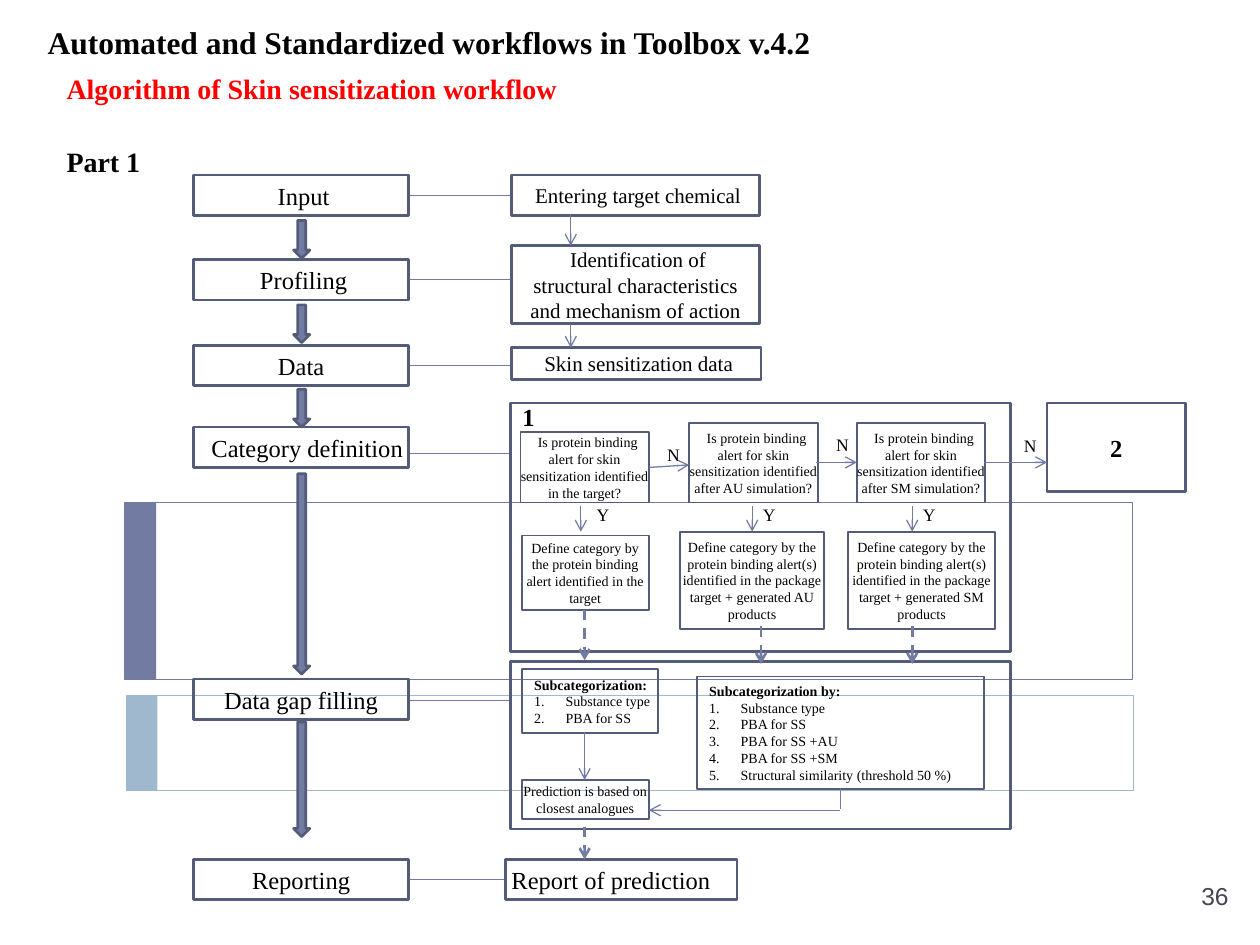
from dataclasses import dataclass
from lxml.etree import SubElement
from pptx import Presentation
from pptx.dml.color import RGBColor
from pptx.enum.dml import MSO_LINE
from pptx.enum.shapes import MSO_CONNECTOR, MSO_SHAPE
from pptx.enum.text import MSO_ANCHOR, PP_ALIGN
from pptx.oxml.ns import qn
from pptx.util import Emu, Inches, Pt

BLACK = RGBColor(0, 0, 0)
RED = RGBColor(0xFF, 0, 0)
SLATE = RGBColor(0x54, 0x5C, 0x79)
BLUE = RGBColor(0x72, 0x7C, 0xA3)
PALE = RGBColor(0x9F, 0xB8, 0xCD)
GREY = RGBColor(0x46, 0x46, 0x53)
SERIF = "Times New Roman"
COLS, ROWS = 1000, 750  # grid laid over the slide

deck = Presentation()
deck.slide_width, deck.slide_height = Inches(10), Inches(7.5)
slide = deck.slides.add_slide(deck.slide_layouts[6])
shapes = slide.shapes


def col(n: float) -> Emu:
    return Emu(round(deck.slide_width * n / COLS))


def row(n: float) -> Emu:
    return Emu(round(deck.slide_height * n / ROWS))


@dataclass
class Box:
    x: float
    y: float
    w: float
    h: float
    text: str = ""
    size: float = 14
    line: float = 1.5
    inset: tuple = (10, 5, 10, 5)
    bold: bool = False
    lead: float = 0
    items: tuple = ()


@dataclass
class Link:
    x1: float
    y1: float
    x2: float
    y2: float
    head: bool = False
    dash: bool = False


@dataclass
class Label:
    x: float
    y: float
    w: float
    h: float
    text: str
    size: float
    color: RGBColor = BLACK
    bold: bool = False
    font: str = SERIF
    align: PP_ALIGN = PP_ALIGN.LEFT
    anchor: MSO_ANCHOR = MSO_ANCHOR.TOP
    inset: tuple = (10, 5, 10, 5)
    wrap: bool = True


def add_run(para, text: str, size: float, bold=False, color=BLACK, font=SERIF) -> None:
    run = para.add_run()
    run.text = text
    run.font.size, run.font.bold, run.font.name = Pt(size), bold, font
    run.font.color.rgb = color


def set_frame(frame, inset: tuple, anchor, wrap=True) -> None:
    left, top, right, base = inset
    frame.margin_left, frame.margin_right = col(left), col(right)
    frame.margin_top, frame.margin_bottom = row(top), row(base)
    frame.vertical_anchor, frame.word_wrap = anchor, wrap


def draw_form(kind, x, y, w, h, fill=None, edge=None, width=1.5):
    form = shapes.add_shape(kind, col(x), row(y), col(w), row(h))
    form.shadow.inherit = False
    for paint, color in ((form.fill, fill), (form.line.fill, edge)):
        if color is None:
            paint.background()
        else:
            paint.solid()
            paint.fore_color.rgb = color
    if edge is not None:
        form.line.width = Pt(width)
    return form


def draw_box(box: Box) -> None:
    form = draw_form(MSO_SHAPE.RECTANGLE, box.x, box.y, box.w, box.h, edge=SLATE, width=box.line)
    if not box.text:
        return
    frame = form.text_frame
    set_frame(frame, box.inset, MSO_ANCHOR.MIDDLE)
    para = frame.paragraphs[0]
    para.alignment = PP_ALIGN.LEFT if box.items else PP_ALIGN.CENTER
    if box.lead:
        para._p.get_or_add_pPr().set("indent", str(col(box.lead)))
    add_run(para, box.text, box.size, box.bold)
    for item in box.items:
        para = frame.add_paragraph()
        para.alignment = PP_ALIGN.LEFT
        props = para._p.get_or_add_pPr()
        props.set("marL", str(col(25)))
        props.set("indent", str(-col(25)))
        SubElement(props, qn("a:buAutoNum"), type="arabicPeriod")
        add_run(para, item, box.size)


def draw_link(link: Link) -> None:
    wire = shapes.add_connector(MSO_CONNECTOR.STRAIGHT, col(link.x1), row(link.y1),
                                col(link.x2), row(link.y2))
    wire.line.color.rgb = BLUE
    wire.line.width = Pt(1.5 if link.dash else 0.75)
    if link.dash:
        wire.line.dash_style = MSO_LINE.DASH
    if link.head:
        SubElement(wire.line._get_or_add_ln(), qn("a:tailEnd"), type="arrow")
    SubElement(wire._element.spPr, qn("a:effectLst"))


def draw_label(label: Label) -> None:
    frame = shapes.add_textbox(col(label.x), row(label.y), col(label.w), row(label.h)).text_frame
    set_frame(frame, label.inset, label.anchor, label.wrap)
    para = frame.paragraphs[0]
    para.alignment = label.align
    add_run(para, label.text, label.size, label.bold, label.color, label.font)


def small(x, y, w, h, text, lead=0) -> Box:
    return Box(x, y, w, h, text, 8, 1, (0, 0, 0, 0), lead=lead)


def listing(x, y, w, h, text, *items) -> Box:
    return Box(x, y, w, h, text, 8, 1, (10, 0, 0, 0), True, items=items)


def mark(x, y, text) -> Label:
    return Label(x, y, 19, 19, text, 10, align=PP_ALIGN.CENTER,
                 anchor=MSO_ANCHOR.MIDDLE, inset=(8, 0, 0, 0))


# Background bands
BANDS = ((99, 399, 140, BLUE), (100, 552, 75, PALE))
for x, y, h, color in BANDS:
    draw_form(MSO_SHAPE.RECTANGLE, x, y, 800, h, edge=color, width=0.5)
for x, y, h, color in BANDS:
    draw_form(MSO_SHAPE.RECTANGLE, x, y, 25, h, fill=color)

# Stages on the left, each wired to its step on the right
STAGES = ((139, "Input", 155, 405, 4), (206, "Profiling", 222, 405, 4), (274, "Data", 290, 405, 0),
          (339, "Category definition", 360, 405, 0), (539, "Data gap filling", 556, 405, 0),
          (682, "Reporting", 698, 401, 0))
for y, text, level, end, lead in STAGES:
    inset = (10, 5, 0, 5) if text.startswith("Category") else (10, 5, 10, 5)
    draw_box(Box(153.5, y, 171, 32, text, inset=inset, lead=lead))
    draw_link(Link(325, level, end, level))
for y, h in ((175, 30), (242, 30), (309, 30), (376, 159), (573, 91)):
    draw_form(MSO_SHAPE.DOWN_ARROW, 233, y, 13, h, BLUE, SLATE)

ASK = "Is protein binding alert for skin sensitization identified "
DEFINE = "Define category by the protein binding "
BOTH = DEFINE + "alert(s) identified in the package target + generated "
BOXES = (
    # Steps
    Box(406, 139, 197, 32, "Entering target chemical", 12, lead=4),
    Box(406, 195, 197, 62,
        "Identification of structural characteristics and mechanism of action", 12, lead=4),
    Box(406, 276, 198, 25, "Skin sensitization data", 12, lead=4),
    Box(401, 682, 184, 32, "Report of prediction", inset=(0, 5, 16, 5)),
    # Panels
    Box(405, 320, 397, 197),
    Box(405, 525, 397, 133),
    Box(831, 320, 110, 70, "2", inset=(0, 0, 0, 0), bold=True),
    # Questions and categories
    small(413, 343, 102, 56, ASK + "in the target?", 5),
    small(547, 336, 102, 63, ASK + "after AU simulation?", 5),
    small(680, 336, 102, 63, ASK + "after SM simulation?", 5),
    small(414, 425, 101, 59, DEFINE + "alert identified in the target"),
    small(540, 422, 114, 77, BOTH + "AU products"),
    small(673, 422, 117, 77, BOTH + "SM products"),
    # Gap filling
    listing(414, 531, 108, 51, "Subcategorization:", "Substance type", "PBA for SS"),
    small(414, 619, 101, 31, "Prediction is based on closest analogues"),
    listing(553, 537, 228, 89, "Subcategorization by:", "Substance type", "PBA for SS",
            "PBA for SS +AU", "PBA for SS +SM", "Structural similarity (threshold 50 %)"),
)
for box in BOXES:
    draw_box(box)

# Arrows: across, down, then dashed
for x1, y1, x2, y2 in ((515, 371, 547, 369), (648, 367, 680, 367), (781, 367, 831, 367),
                       (667, 643, 515, 643)):
    draw_link(Link(x1, y1, x2, y2, head=True))
draw_link(Link(667, 625, 667, 642))
for x, top, end in ((453, 170, 195), (453, 257, 276), (464, 581, 619),
                    (461, 402, 422), (597, 402, 422), (724, 402, 422)):
    draw_link(Link(x, top, x, end, head=True))
for x, top, end in ((464, 484, 524), (604, 497, 527), (724, 497, 527), (464, 656, 682)):
    draw_link(Link(x, top, x, end, head=True, dash=True))

# Labels
LABELS = (
    mark(465, 399, "Y"), mark(597, 399, "Y"), mark(724, 399, "Y"),
    mark(521, 351, "N"), mark(655, 343, "N"), mark(804, 344, "N"),
    Label(401, 318, 37, 25, "1", 14, bold=True, align=PP_ALIGN.CENTER,
          anchor=MSO_ANCHOR.MIDDLE, inset=(0, 0, 0, 0)),
    Label(28, 13, 627, 40, "Automated and Standardized workflows in Toolbox v.4.2", 18,
          bold=True, wrap=False),
    Label(43, 52, 415, 37, "Algorithm of Skin sensitization workflow", 16, RED, True, wrap=False),
    Label(43, 110, 79, 37, "Part 1", 16, bold=True, wrap=False),
    Label(768, 694, 217, 40, "36", 14, GREY, font="Arial", align=PP_ALIGN.RIGHT),
)
for label in LABELS:
    draw_label(label)

deck.save("out.pptx")
